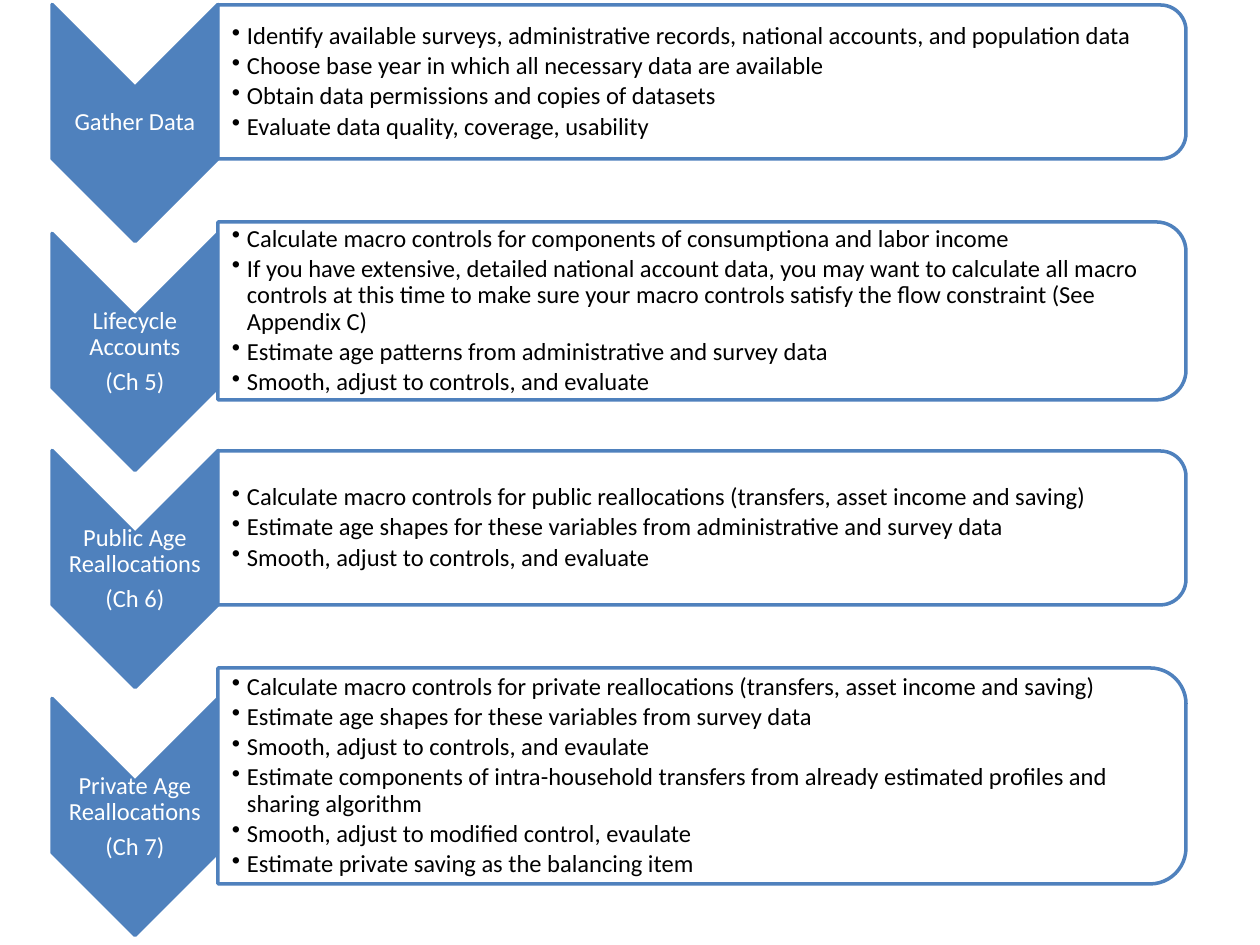
from dataclasses import dataclass

from lxml import etree
from pptx import Presentation
from pptx.dml.color import RGBColor
from pptx.enum.shapes import MSO_SHAPE
from pptx.enum.text import MSO_ANCHOR, PP_ALIGN
from pptx.oxml.ns import qn
from pptx.util import Emu, Pt

CHEVRON = MSO_SHAPE.CHEVRON
ROUND_SIDE = MSO_SHAPE.ROUND_2_SAME_RECTANGLE
MIDDLE = MSO_ANCHOR.MIDDLE
CENTER = PP_ALIGN.CENTER
LEFT = PP_ALIGN.LEFT

PX_PER_INCH = 126
COLORS = {"blue": "4F81BD", "white": "FFFFFF", "black": "000000"}
FONT = "Calibri"
FONT_SIZE = 14

CHEVRON_LEFT, CHEVRON_WIDTH, CHEVRON_HEIGHT = 52, 166, 237
CHEVRON_DROP = 41  # chevron centre below panel centre
LABEL_HEIGHT = 72
PANEL_LEFT, PANEL_WIDTH = 218, 968
TEXT_WIDTH = 960
FIRST_TOP = 5
OVERLAP = 19  # chevron tip reaches below the next panel's top
BULLET_INDENT = 15


@dataclass(frozen=True)
class Stage:
    label: list[str]
    tasks: list[str]
    panel_height: int


@dataclass(frozen=True)
class Frame:
    left: int
    center_y: int
    width: int
    height: int

    @property
    def top(self) -> float:
        return self.center_y - self.height / 2


STAGES = [
    Stage(["Gather Data"], [
        "Identify available surveys, administrative records, national accounts, and population data",
        "Choose base year in which all necessary data are available",
        "Obtain data permissions and copies of datasets",
        "Evaluate data quality, coverage, usability",
    ], 154),
    Stage(["Lifecycle Accounts", "(Ch 5)"], [
        "Calculate macro controls for components of consumptiona and labor income",
        "If you have extensive, detailed national account data, you may want to calculate all macro "
        "controls at this time to make sure your macro controls satisfy the flow constraint "
        "(See Appendix C)",
        "Estimate age patterns from administrative and survey data",
        "Smooth, adjust to controls, and evaluate",
    ], 178),
    Stage(["Public Age Reallocations", "(Ch 6)"], [
        "Calculate macro controls for public reallocations (transfers, asset income and saving)",
        "Estimate age shapes for these variables from administrative and survey data",
        "Smooth, adjust to controls, and evaluate",
    ], 154),
    Stage(["Private Age Reallocations", "(Ch 7)"], [
        "Calculate macro controls for private reallocations (transfers, asset income and saving)",
        "Estimate age shapes for these variables from survey data",
        "Smooth, adjust to controls, and evaulate",
        "Estimate components of intra-household transfers from already estimated profiles and "
        "sharing algorithm",
        "Smooth, adjust to modified control, evaulate",
        "Estimate private saving as the balancing item",
    ], 216),
]


def px(length: float) -> Emu:
    return Emu(round(length * 914400 / PX_PER_INCH))


def color(name: str) -> RGBColor:
    return RGBColor.from_string(COLORS[name])


def add_turned_shape(page, kind, frame: Frame, fill: str):
    """Add a shape turned by 90 degrees that covers the frame once turned."""
    left = frame.left + (frame.width - frame.height) / 2
    top = frame.center_y - frame.width / 2
    shape = page.shapes.add_shape(kind, px(left), px(top), px(frame.height), px(frame.width))
    shape.rotation = 90
    shape.shadow.inherit = False
    shape.fill.solid()
    shape.fill.fore_color.rgb = color(fill)
    shape.line.color.rgb = color("blue")
    shape.line.width = Pt(2)
    return shape


def set_opacity(shape, percent: int) -> None:
    fill_color = shape.fill._xPr.find(qn("a:solidFill"))[0]
    etree.SubElement(fill_color, qn("a:alpha"), val=str(percent * 1000))


def add_bullet(paragraph) -> None:
    properties = paragraph._p.get_or_add_pPr()
    properties.set("marL", str(px(BULLET_INDENT)))
    properties.set("indent", str(-px(BULLET_INDENT)))
    etree.SubElement(properties, qn("a:buChar"), char="•")


def add_text(page, frame: Frame, lines: list[str], ink: str, space_after: float,
             left_inset: int = 1, bulleted: bool = False) -> None:
    box = page.shapes.add_textbox(px(frame.left), px(frame.top), px(frame.width), px(frame.height))
    text = box.text_frame
    text.word_wrap = True
    text.vertical_anchor = MIDDLE
    text.margin_left = px(left_inset)
    text.margin_top = text.margin_right = text.margin_bottom = px(1)
    for index, line in enumerate(lines):
        paragraph = text.add_paragraph() if index else text.paragraphs[0]
        paragraph.text = line
        if bulleted:
            paragraph.level = 1
            add_bullet(paragraph)
        paragraph.alignment = LEFT if bulleted else CENTER
        paragraph.line_spacing = 0.9
        paragraph.space_after = Pt(space_after)
        paragraph.font.name = FONT
        paragraph.font.size = Pt(FONT_SIZE)
        paragraph.font.color.rgb = color(ink)


def add_stage(page, stage: Stage, top: int) -> int:
    """Draw one stage and return the y of its chevron tip."""
    panel_y = top + stage.panel_height // 2
    chevron_y = panel_y + CHEVRON_DROP
    add_turned_shape(page, CHEVRON,
                     Frame(CHEVRON_LEFT, chevron_y, CHEVRON_WIDTH, CHEVRON_HEIGHT), "blue")
    add_text(page, Frame(CHEVRON_LEFT, chevron_y, CHEVRON_WIDTH, LABEL_HEIGHT),
             stage.label, "white", space_after=0.35 * FONT_SIZE)
    panel = add_turned_shape(page, ROUND_SIDE,
                             Frame(PANEL_LEFT, panel_y, PANEL_WIDTH, stage.panel_height), "white")
    set_opacity(panel, 90)
    add_text(page, Frame(PANEL_LEFT, panel_y, TEXT_WIDTH, round(0.9 * stage.panel_height)),
             stage.tasks, "black", space_after=0.15 * FONT_SIZE, left_inset=14, bulleted=True)
    return chevron_y + CHEVRON_HEIGHT // 2


def main() -> None:
    deck = Presentation()
    deck.slide_width = px(1260)
    deck.slide_height = px(945)
    page = deck.slides.add_slide(deck.slide_layouts[6])
    top = FIRST_TOP
    for stage in STAGES:
        top = add_stage(page, stage, top) - OVERLAP
    deck.save("out.pptx")


if __name__ == "__main__":
    main()
